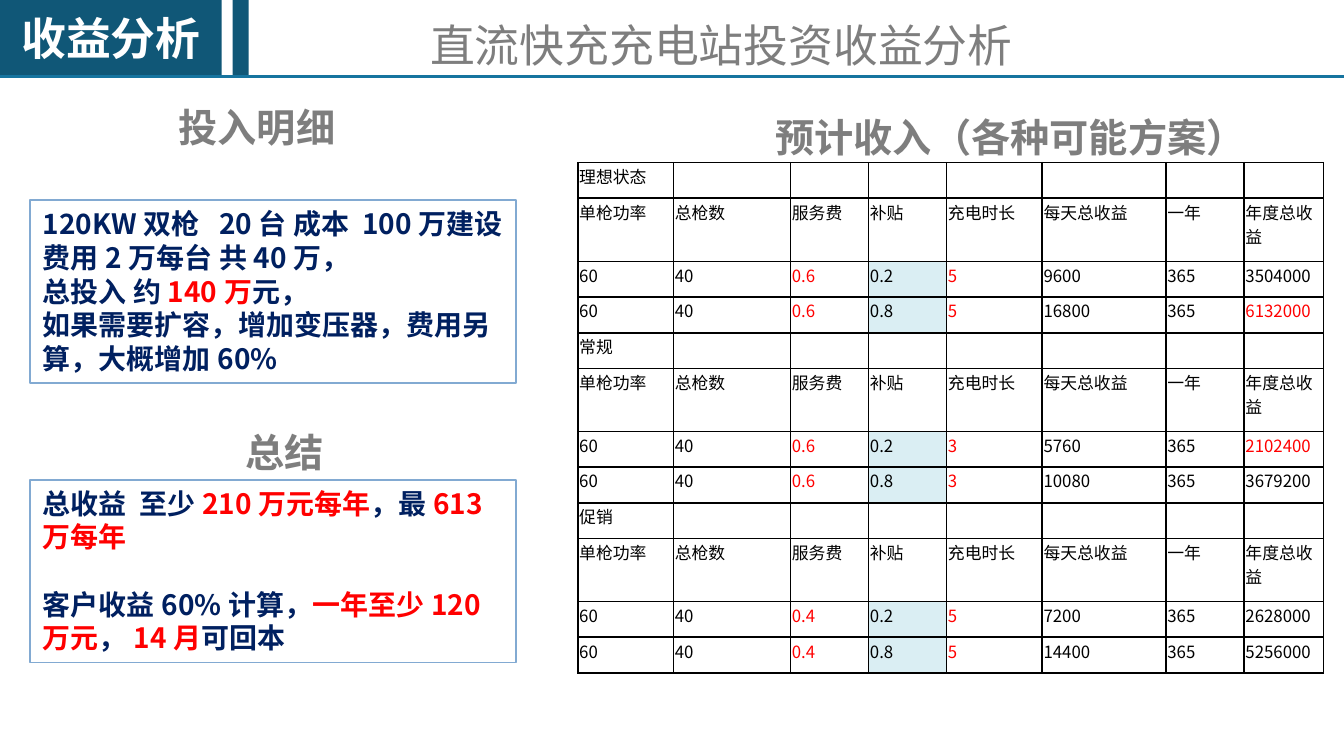
"""Build the charging-station investment return slide."""
from lxml.etree import SubElement
from pptx import Presentation
from pptx.dml.color import RGBColor as Rgb
from pptx.enum.shapes import MSO_CONNECTOR as Connector, MSO_SHAPE as Preset
from pptx.enum.text import MSO_ANCHOR as Anchor, PP_ALIGN as Align
from pptx.oxml.ns import qn
from pptx.util import Inches, Pt

COLORS = {"teal": "105777", "rule": "16749F", "white": "FFFFFF", "gray": "7E7E7E", "navy": "002060",
          "red": "FF0000", "black": "000000", "frame": "82AAD2", "tint": "DAEEF3"}
NOTO, ARIAL = "Noto Sans CJK SC", "Arial"
WIDTH = 10
HEIGHT = WIDTH * 9 / 16

SECTION = "收益分析"
TITLE = "直流快充充电站投资收益分析"
HEADINGS = [("预计收入（各种可能方案）", (5.67, 0.79, 3.7, 0.45)),
            ("投入明细", (1.23, 0.72, 1.37, 0.45)),
            ("总结", (1.73, 3.14, 0.78, 0.45))]
INVESTMENT = [[("120KW双枪  20台 成本 100万建设费用2万每台 共40万，", "navy")],
              [("总投入 约", "navy"), ("140万", "red"), ("元，", "navy")],
              [("如果需要扩容，增加变压器，费用另算，大概增加60%", "navy")]]
SUMMARY = [[("总收益  至少", "navy"), ("210万元每年", "red"), ("，最", "navy"), ("613万每年", "red")],
           [("客户收益60%计算，", "navy"), ("一年至少120万元", "red"), ("，", "navy"),
            ("14月", "red"), ("可回本", "navy")]]
PANELS = [(INVESTMENT, 1.49, 0), (SUMMARY, 3.57, 18)]
HEADER = ["单枪功率", "总枪数", "服务费", "补贴", "充电时长", "每天总收益", "一年", "年度总收益"]
SCENARIOS = [
    ("理想状态", [["60", "40", "0.6", "0.2", "5", "9600", "365", "3504000"],
              ["60", "40", "0.6", "0.8", "5", "16800", "365", "6132000"]]),
    ("常规", [["60", "40", "0.6", "0.2", "3", "5760", "365", "2102400"],
            ["60", "40", "0.6", "0.8", "3", "10080", "365", "3679200"]]),
    ("促销", [["60", "40", "0.4", "0.2", "5", "7200", "365", "2628000"],
            ["60", "40", "0.4", "0.8", "5", "14400", "365", "5256000"]])]
HIGHLIGHTS = {"6132000", "2102400"}
SUBSIDY, ASSUMPTIONS = 3, {2, 4}
COLUMN_SHARES = [0.71, 0.87, 0.58, 0.58, 0.71, 0.92, 0.58, 0.59]
TABLE_BOX = (4.3, 1.21, 5.55, 3.8)
HEADER_HEIGHT = 0.47
CELL_FORMAT = {"margin_left": Inches(0.01), "margin_right": Inches(0.01),
               "margin_top": Inches(0.01), "margin_bottom": Inches(0.04)}


def inches(box):
    return [Inches(length) for length in box]


def color(name):
    return Rgb.from_string(COLORS[name])


def write(paragraph, text, size, tint, bold=False, face=NOTO):
    run = paragraph.add_run()
    run.text = text
    for attribute, value in {"size": Pt(size), "bold": bold, "name": face}.items():
        setattr(run.font, attribute, value)
    run.font.color.rgb = color(tint)
    if face == NOTO:
        SubElement(run.font._element, qn("a:ea"), typeface=face)


def add_panel(slide, box, fill, frame=None):
    panel = slide.shapes.add_shape(Preset.RECTANGLE, *inches(box))
    panel.shadow.inherit = False
    panel.fill.solid()
    panel.fill.fore_color.rgb = color(fill)
    if frame:
        panel.line.color.rgb = color(frame)
        panel.line.width = Pt(1)
    else:
        panel.line.fill.background()
    return panel


def add_heading(slide, text, box, size, spacing, bold, **margins):
    frame = slide.shapes.add_textbox(*inches(box)).text_frame
    for attribute, value in {"word_wrap": False, **margins}.items():
        setattr(frame, attribute, value)
    paragraph = frame.paragraphs[0]
    paragraph.line_spacing = Pt(spacing)
    write(paragraph, text, size, "gray", bold)


def add_banner(slide):
    section = add_panel(slide, (0, -0.01, 1.65, 0.58), "teal")
    section.text_frame.vertical_anchor = Anchor.MIDDLE
    paragraph = section.text_frame.paragraphs[0]
    paragraph.alignment = Align.CENTER
    write(paragraph, SECTION, 24, "white", True, ARIAL)
    add_panel(slide, (1.73, -0.01, 0.12, 0.58), "teal")
    rule = slide.shapes.add_connector(Connector.STRAIGHT, *inches((0, 0.57, WIDTH, 0.57)))
    rule.line.color.rgb = color("rule")
    rule.line.width = Pt(2)
    SubElement(rule._element.spPr, qn("a:effectLst"))


def add_notes_panel(slide, paragraphs, top, gap):
    frame = add_panel(slide, (0.22, top, 3.62, 1.36), "white", "frame").text_frame
    frame.word_wrap = True
    frame.vertical_anchor = Anchor.TOP
    for index, pieces in enumerate(paragraphs):
        paragraph = frame.add_paragraph() if index else frame.paragraphs[0]
        paragraph.alignment = Align.LEFT
        paragraph.line_spacing = Pt(18)
        if index:
            paragraph.space_before = Pt(gap)
        for text, tint in pieces:
            write(paragraph, text, 15, tint, True)


def border_cell(cell):
    properties = cell._tc.get_or_add_tcPr()
    for position, side in enumerate(("a:lnL", "a:lnR", "a:lnT", "a:lnB")):
        edge = SubElement(properties, qn(side), w=str(Pt(1)))
        fill = SubElement(edge, qn("a:solidFill"))
        SubElement(fill, qn("a:srgbClr"), val=COLORS["black"])
        properties.insert(position, edge)


def add_income_table(slide):
    rows = []
    for scenario, plans in SCENARIOS:
        rows += [[scenario] + [""] * (len(HEADER) - 1), HEADER, *plans]
    table = slide.shapes.add_table(len(rows), len(HEADER), *inches(TABLE_BOX)).table
    table.first_row = table.horz_banding = False
    for column, share in zip(table.columns, COLUMN_SHARES):
        column.width = Inches(TABLE_BOX[2] * share / sum(COLUMN_SHARES))
    header_count = len(SCENARIOS)
    row_height = (TABLE_BOX[3] - header_count * HEADER_HEIGHT) / (len(rows) - header_count)
    for row_index, values in enumerate(rows):
        table.rows[row_index].height = Inches(HEADER_HEIGHT if values is HEADER else row_height)
        is_plan = values[0].isdigit()
        for column_index, value in enumerate(values):
            cell = table.cell(row_index, column_index)
            for attribute, setting in CELL_FORMAT.items():
                setattr(cell, attribute, setting)
            if is_plan and column_index == SUBSIDY:
                cell.fill.solid()
                cell.fill.fore_color.rgb = color("tint")
            else:
                cell.fill.background()
            border_cell(cell)
            paragraph = cell.text_frame.paragraphs[0]
            if value:
                is_red = is_plan and (column_index in ASSUMPTIONS or value in HIGHLIGHTS)
                write(paragraph, value, 9, "red" if is_red else "black", face=NOTO if is_plan else ARIAL)
            else:
                SubElement(paragraph._p, qn("a:endParaRPr"), sz="900")


def main():
    deck = Presentation()
    deck.slide_width, deck.slide_height = inches((WIDTH, HEIGHT))
    slide = deck.slides.add_slide(deck.slide_layouts[6])
    add_banner(slide)
    add_income_table(slide)
    for text, box in HEADINGS:
        add_heading(slide, text, box, 21, 25.2, True)
    for paragraphs, top, gap in PANELS:
        add_notes_panel(slide, paragraphs, top, gap)
    add_heading(slide, TITLE, (3.13, 0.13, 5.49, 0.44), 24, 26, False,
                margin_left=Inches(0.07), margin_right=Inches(0.07),
                margin_top=Inches(0.04), margin_bottom=Inches(0.04))
    deck.save("out.pptx")


if __name__ == "__main__":
    main()
